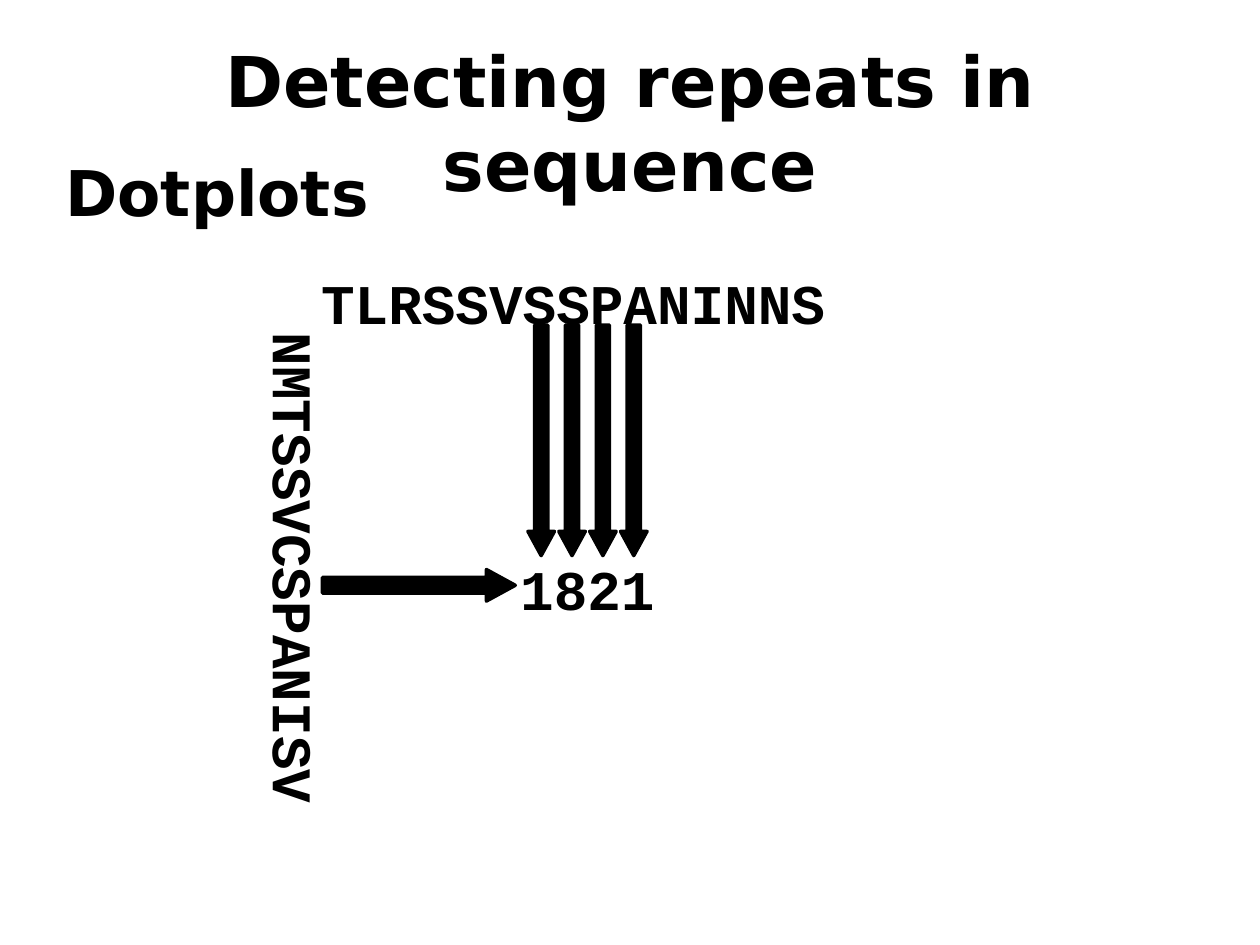
from dataclasses import dataclass

from pptx import Presentation
from pptx.dml.color import RGBColor
from pptx.enum.shapes import MSO_SHAPE
from pptx.enum.text import MSO_AUTO_SIZE, PP_ALIGN
from pptx.slide import Slide
from pptx.util import Inches, Pt

DOWN_ARROW = MSO_SHAPE.DOWN_ARROW
GROW = MSO_AUTO_SIZE.SHAPE_TO_FIT_TEXT
LEFT, CENTER = PP_ALIGN.LEFT, PP_ALIGN.CENTER


@dataclass(frozen=True)
class Theme:
    ink: RGBColor = RGBColor(0, 0, 0)
    heading_font: str = "DejaVu Sans"
    sequence_font: str = "Courier New"
    title_size: int = 40
    subtitle_size: int = 36
    sequence_size: int = 32
    arrow_line: int = 2


THEME = Theme()


@dataclass(frozen=True)
class Box:
    left: float
    top: float
    width: float
    height: float
    rotation: int = 0


@dataclass(frozen=True)
class Label:
    text: str
    box: Box
    size: int = THEME.sequence_size
    font: str = THEME.sequence_font
    align: PP_ALIGN = LEFT
    wrap: bool = False


SUBTITLE = Label("Dotplots", Box(0.42, 1.17, 9.08, 1.51),
                 THEME.subtitle_size, THEME.heading_font, wrap=True)
TITLE = Label("Detecting repeats in sequence", Box(0.25, 0.25, 9.5, 0.77),
              THEME.title_size, THEME.heading_font, CENTER, True)
SEQUENCES = (
    Label("TLRSSVSSPANINNS", Box(2.45, 2.08, 4.26, 0.64)),
    Label("NMTSSVCSPANISV", Box(0.35, 4.21, 3.98, 0.64, 90)),
    Label("1821", Box(4.03, 4.35, 1.28, 0.64)),
)
ROW_ARROW = Box(3.2, 3.88, 0.25, 1.53, 270)
COLUMN_ARROWS = tuple(Box(4.19 + 0.245 * column, 2.58, 0.21, 1.83) for column in range(4))


def add_label(slide: Slide, label: Label) -> None:
    box = label.box
    textbox = slide.shapes.add_textbox(
        Inches(box.left), Inches(box.top), Inches(box.width), Inches(box.height))
    textbox.rotation = box.rotation
    frame = textbox.text_frame
    frame.text = label.text
    frame.word_wrap = label.wrap
    frame.auto_size = GROW
    paragraph = frame.paragraphs[0]
    paragraph.alignment = label.align
    font = paragraph.runs[0].font
    font.name = label.font
    font.size = Pt(label.size)
    font.bold = True
    font.color.rgb = THEME.ink


def add_arrow(slide: Slide, box: Box) -> None:
    arrow = slide.shapes.add_shape(
        DOWN_ARROW, Inches(box.left), Inches(box.top), Inches(box.width), Inches(box.height))
    arrow.rotation = box.rotation
    arrow.adjustments[0] = 0.5
    arrow.adjustments[1] = 0.915
    arrow.shadow.inherit = False
    arrow.fill.solid()
    arrow.fill.fore_color.rgb = THEME.ink
    arrow.line.color.rgb = THEME.ink
    arrow.line.width = Pt(THEME.arrow_line)


def main() -> None:
    """Build the dotplot slide and save it."""
    presentation = Presentation()
    presentation.slide_width = Inches(10)
    presentation.slide_height = Inches(7.5)
    slide = presentation.slides.add_slide(presentation.slide_layouts[6])
    for label in (SUBTITLE, *SEQUENCES):
        add_label(slide, label)
    for box in (ROW_ARROW, *COLUMN_ARROWS):
        add_arrow(slide, box)
    add_label(slide, TITLE)
    presentation.save("out.pptx")


if __name__ == "__main__":
    main()
